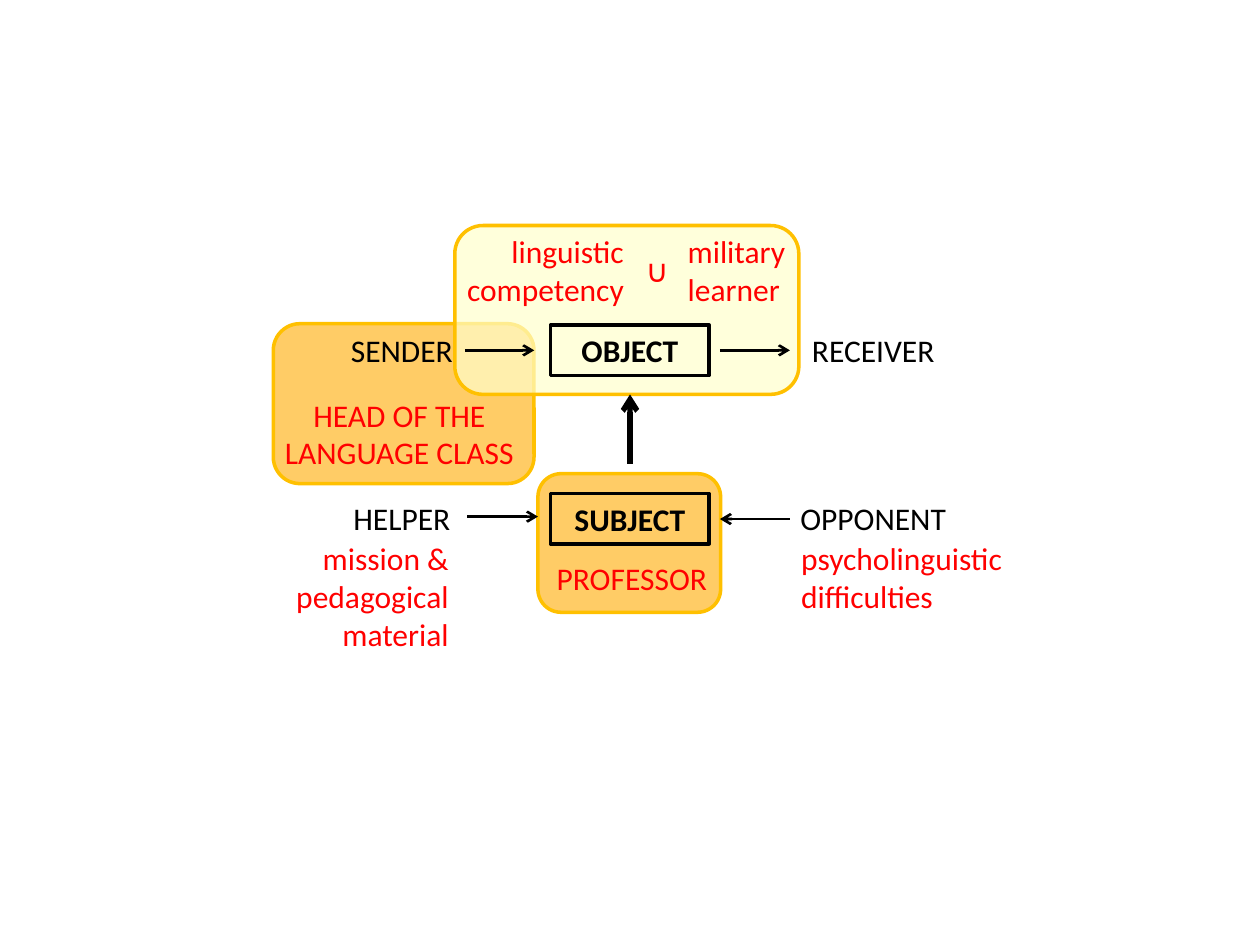
"""Build an actantial model slide of a language class."""
from typing import NamedTuple

from lxml.etree import SubElement
from pptx import Presentation
from pptx.dml.color import RGBColor
from pptx.enum.shapes import MSO_CONNECTOR, MSO_SHAPE
from pptx.enum.text import MSO_ANCHOR, PP_ALIGN
from pptx.oxml.ns import qn
from pptx.shapes.autoshape import Shape
from pptx.slide import Slide
from pptx.text.text import TextFrame
from pptx.util import Pt

BLACK = RGBColor(0x00, 0x00, 0x00)
RED = RGBColor(0xFF, 0x00, 0x00)
ORANGE = RGBColor(0xFF, 0xCC, 0x66)
CREAM = RGBColor(0xFF, 0xFF, 0xCC)
GOLD = RGBColor(0xFF, 0xC0, 0x00)
FONT = "Calibri"
LINE_HEIGHT = 22
ROLE_WIDTH, ROLE_HEIGHT = 90.7, 28.8


class Panel(NamedTuple):
    left: float
    top: float
    width: float
    height: float
    fill: RGBColor
    opacity: int = 100


class Label(NamedTuple):
    text: str
    left: float
    top: float
    width: float
    color: RGBColor = RED
    align: PP_ALIGN = PP_ALIGN.CENTER
    lines: int = 1


class Role(NamedTuple):
    text: str
    left: float
    top: float


class Arrow(NamedTuple):
    start: tuple[float, float]
    end: tuple[float, float]
    weight: float = 1.5


PANELS = [
    Panel(156.2, 185, 149, 91.4, ORANGE),
    Panel(307.4, 270.7, 104.4, 79.2, ORANGE),
    Panel(259.9, 128.9, 196.6, 96.5, CREAM, opacity=70),
]
LABELS = [
    Label("HEAD OF THE LANGUAGE CLASS", 147.6, 222.5, 161.3, lines=2),
    Label("PROFESSOR", 305.3, 316.1, 111.6),
    Label("∪", 360, 139.7, 31),
    Label("linguistic\ncompetency", 252, 128.9, 111.6, align=PP_ALIGN.RIGHT, lines=2),
    Label("military\nlearner", 385.9, 128.9, 76.3, align=PP_ALIGN.LEFT, lines=2),
    Label("SENDER", 184.3, 185.8, 90.7, BLACK),
    Label("HELPER", 175.7, 281.7, 108, BLACK),
    Label("OPPONENT", 445, 281.7, 108, BLACK),
    Label("RECEIVER", 445, 185.8, 108, BLACK),
    Label("mission & pedagogical material", 127.4, 304.6, 136.1, align=PP_ALIGN.RIGHT, lines=3),
    Label("psycholinguistic\ndifficulties", 450.7, 304.6, 130.3, align=PP_ALIGN.LEFT, lines=2),
]
ROLES = [Role("OBJECT", 314.6, 185.8), Role("SUBJECT", 314.6, 282)]
ARROWS = [
    Arrow((360, 265), (360, 225.4), weight=3),
    Arrow((265.7, 200.2), (305.3, 200.2)),
    Arrow((411.4, 200.2), (451.4, 200.2)),
    Arrow((267.1, 295.2), (307.4, 295.2)),
    Arrow((451.4, 296.6), (411.4, 296.6)),
]


def write_text(frame: TextFrame, text: str, *, color: RGBColor = BLACK,
               align: PP_ALIGN = PP_ALIGN.CENTER, bold: bool = False) -> None:
    """Fill a frame with one paragraph for each line of text."""
    frame.word_wrap = True
    for number, line in enumerate(text.split("\n")):
        para = frame.add_paragraph() if number else frame.paragraphs[0]
        para.alignment = align
        span = para.add_run()
        span.text = line
        span.font.name = FONT
        span.font.size = Pt(18)
        span.font.bold = bold
        span.font.color.rgb = color


def add_outlined(page: Slide, kind: MSO_SHAPE, left: float, top: float,
                 width: float, height: float, line_color: RGBColor) -> Shape:
    """Add a preset shape with a two-point outline and no shadow."""
    box = page.shapes.add_shape(kind, Pt(left), Pt(top), Pt(width), Pt(height))
    box.shadow.inherit = False
    box.line.color.rgb = line_color
    box.line.width = Pt(2)
    return box


def draw_panel(page: Slide, panel: Panel) -> None:
    """Draw a rounded area behind the labels."""
    box = add_outlined(page, MSO_SHAPE.ROUNDED_RECTANGLE, panel.left, panel.top,
                       panel.width, panel.height, GOLD)
    box.fill.solid()
    box.fill.fore_color.rgb = panel.fill
    if panel.opacity < 100:
        color = box.fill._xPr.find(qn("a:solidFill")).find(qn("a:srgbClr"))
        SubElement(color, qn("a:alpha"), val=str(panel.opacity * 1000))


def draw_label(page: Slide, label: Label) -> None:
    """Draw a plain text label."""
    height = label.lines * LINE_HEIGHT + 7
    box = page.shapes.add_textbox(Pt(label.left), Pt(label.top), Pt(label.width), Pt(height))
    write_text(box.text_frame, label.text, color=label.color, align=label.align)


def draw_role(page: Slide, role: Role) -> None:
    """Draw a framed central role."""
    box = add_outlined(page, MSO_SHAPE.RECTANGLE, role.left, role.top,
                       ROLE_WIDTH, ROLE_HEIGHT, BLACK)
    box.fill.background()
    box.text_frame.vertical_anchor = MSO_ANCHOR.MIDDLE
    write_text(box.text_frame, role.text, bold=True)


def draw_arrow(page: Slide, arrow: Arrow) -> None:
    """Draw a straight line with an open arrowhead at its end."""
    points = [Pt(value) for value in (*arrow.start, *arrow.end)]
    link = page.shapes.add_connector(MSO_CONNECTOR.STRAIGHT, *points)
    link.line.color.rgb = BLACK
    link.line.width = Pt(arrow.weight)
    SubElement(link.line._get_or_add_ln(), qn("a:tailEnd"), type="arrow")
    SubElement(link._element.spPr, qn("a:effectLst"))


def main() -> None:
    """Build and save the deck."""
    deck = Presentation()
    deck.slide_width, deck.slide_height = Pt(720), Pt(540)
    page = deck.slides.add_slide(deck.slide_layouts[6])
    for panel in PANELS:
        draw_panel(page, panel)
    for label in LABELS:
        draw_label(page, label)
    for role in ROLES:
        draw_role(page, role)
    for arrow in ARROWS:
        draw_arrow(page, arrow)
    deck.save("out.pptx")


if __name__ == "__main__":
    main()
